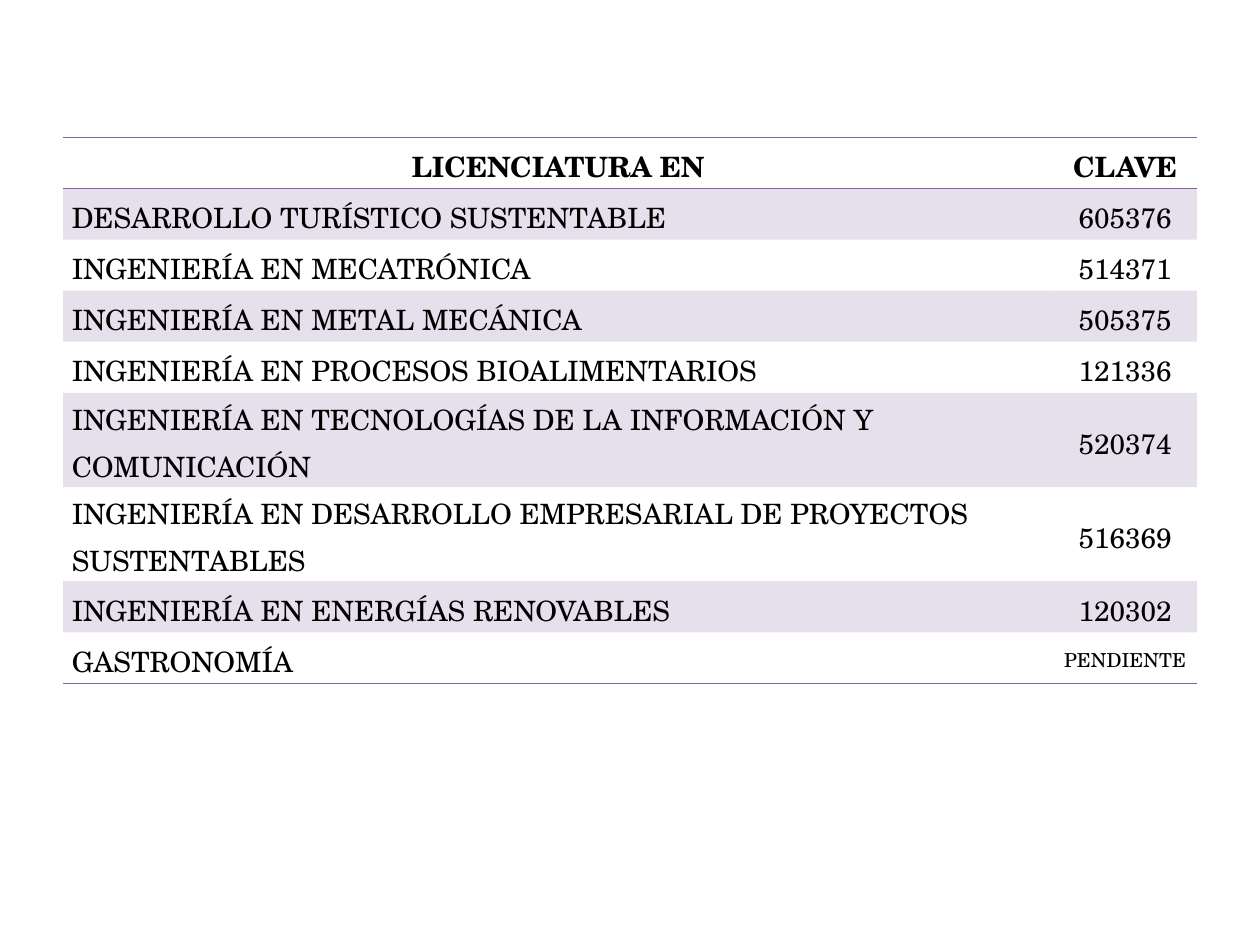
from lxml.etree import SubElement
from pptx import Presentation
from pptx.dml.color import RGBColor
from pptx.enum.text import MSO_ANCHOR as Anchor, PP_ALIGN as Align
from pptx.oxml import parse_xml
from pptx.oxml.ns import nsdecls, qn
from pptx.util import Inches, Pt

FONT = "TeX Gyre Schola"
PURPLE = RGBColor(0x80, 0x64, 0xA2)
BLACK = RGBColor(0, 0, 0)
NO_STYLE = "{2D5ABB26-0587-4C30-8999-92F81FD0307C}"
COLUMN_WIDTHS = (7.86, 1.14)
PROGRAMS = (
    ("LICENCIATURA EN", "CLAVE"),
    ("DESARROLLO TURÍSTICO SUSTENTABLE", "605376"),
    ("INGENIERÍA EN MECATRÓNICA", "514371"),
    ("INGENIERÍA EN METAL MECÁNICA", "505375"),
    ("INGENIERÍA EN PROCESOS BIOALIMENTARIOS", "121336"),
    ("INGENIERÍA EN TECNOLOGÍAS DE LA INFORMACIÓN Y COMUNICACIÓN", "520374"),
    ("INGENIERÍA EN DESARROLLO EMPRESARIAL DE PROYECTOS SUSTENTABLES", "516369"),
    ("INGENIERÍA EN ENERGÍAS RENOVABLES", "120302"),
    ("GASTRONOMÍA", "PENDIENTE"),
)


def write_cell(cell, text, size, bold, align):
    """Put one formatted run in a cell."""
    cell.margin_left = cell.margin_right = Inches(0.07)
    cell.margin_top = cell.margin_bottom = 0
    cell.vertical_anchor = Anchor.MIDDLE
    p = cell.text_frame.paragraphs[0]
    p.alignment = align
    p.line_spacing = 1.15
    r = p.add_run()
    r.text = text
    r.font.name = FONT
    r.font.size = Pt(size)
    r.font.bold = bold
    r.font.color.rgb = BLACK


def fill_cell(cell, banded):
    """Give a cell the translucent band colour or no fill."""
    if not banded:
        cell.fill.background()
        return
    cell.fill.solid()
    cell.fill.fore_color.rgb = PURPLE
    color = cell._tc.tcPr.find(".//" + qn("a:srgbClr"))
    SubElement(color, qn("a:alpha"), val="20000")


def rule_cell(cell, sides):
    """Draw purple rules on the given sides of a cell, in T, B order."""
    for i, side in enumerate(sides):
        line = parse_xml(
            f'<a:ln{side} {nsdecls("a")} w="{Pt(1)}"><a:solidFill>'
            f'<a:srgbClr val="{PURPLE}"/></a:solidFill></a:ln{side}>')
        cell._tc.tcPr.insert(i, line)


def add_program_table(slide):
    """Add the table of degree programs and their codes."""
    table = slide.shapes.add_table(
        len(PROGRAMS), len(COLUMN_WIDTHS),
        Inches(0.5), Inches(1.09), Inches(9), Inches(3.65)).table
    table.first_row = table.horz_banding = False
    table._tbl.tblPr.find(qn("a:tableStyleId")).text = NO_STYLE
    for column, width in zip(table.columns, COLUMN_WIDTHS):
        column.width = Inches(width)
    last = len(PROGRAMS) - 1
    for row, values in enumerate(PROGRAMS):
        sides = {0: "TB", last: "B"}.get(row, "")
        for col, text in enumerate(values):
            cell = table.cell(row, col)
            size = 11 if text == "PENDIENTE" else 16
            align = Align.CENTER if row == 0 or col == 1 else Align.LEFT
            write_cell(cell, text, size, row == 0, align)
            fill_cell(cell, row % 2 == 1)
            rule_cell(cell, sides)


def main():
    """Build and save the slide."""
    prs = Presentation()
    prs.slide_width, prs.slide_height = Inches(10), Inches(7.5)
    slide = prs.slides.add_slide(prs.slide_layouts[6])
    add_program_table(slide)
    prs.save("out.pptx")


if __name__ == "__main__":
    main()
